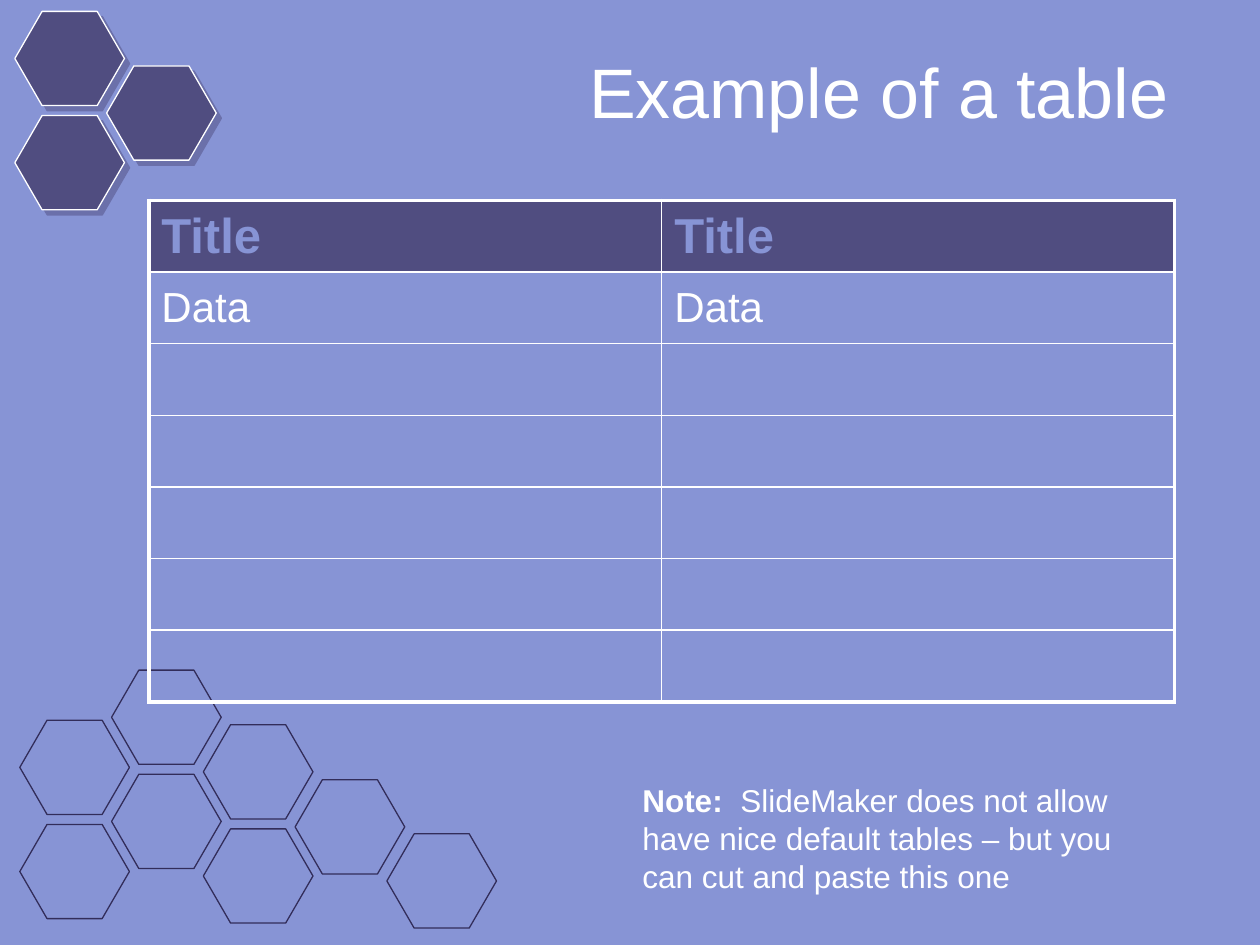
from dataclasses import dataclass

from lxml.etree import SubElement
from pptx import Presentation
from pptx.dml.color import RGBColor
from pptx.enum.shapes import MSO_SHAPE as Shape
from pptx.enum.text import MSO_ANCHOR as Anchor, PP_ALIGN as Align
from pptx.oxml import parse_xml
from pptx.oxml.ns import nsdecls, qn
from pptx.util import Cm, Pt

COLORS = {"sky": "8794D5", "plum": "504D80", "ink": "322D5A", "white": "FFFFFF"}
FONT = "Arial"
HEX_W, HEX_H = 2.21, 1.9
COLUMN_STEP, ROW_STEP = 1.85, 2.1
THICK, THIN = 2.25, 1


@dataclass
class HexColumn:
    index: int
    top: float
    count: int


@dataclass
class Honeycomb:
    left: float
    columns: list[HexColumn]
    line: str
    fill: str | None = None


@dataclass
class TextRun:
    text: str
    size: float
    bold: bool = False
    color: str = "white"


HONEYCOMBS = [
    Honeycomb(0.4, [HexColumn(0, 14.52, 2), HexColumn(1, 13.51, 2), HexColumn(2, 14.61, 2),
                    HexColumn(3, 15.72, 1), HexColumn(4, 16.81, 1)], "ink"),
    Honeycomb(0.3, [HexColumn(0, 0.23, 2), HexColumn(1, 1.33, 1)], "white", "plum"),
]
HEADER = ["Title", "Title"]
DATA = [["Data", "Data"]] + [["", ""]] * 5


def rgb(name: str) -> RGBColor:
    return RGBColor.from_string(COLORS[name])


def add_run(p, run: TextRun) -> None:
    r = p.add_run()
    r.text = run.text
    r.font.name = FONT
    r.font.size = Pt(run.size)
    r.font.bold = run.bold
    r.font.color.rgb = rgb(run.color)


def add_shadow(sp) -> None:
    """Half-transparent shadow towards the lower right."""
    effects = sp._element.spPr.find(qn("a:effectLst"))
    shadow = SubElement(effects, qn("a:outerShdw"), dist=str(Pt(4.2)), dir="2700000",
                        algn="ctr", rotWithShape="0")
    color = SubElement(shadow, qn("a:srgbClr"), val=COLORS["plum"])
    SubElement(color, qn("a:alpha"), val="50000")


def draw_hexagon(s, left: float, top: float, line: str, fill: str | None) -> None:
    sp = s.shapes.add_shape(Shape.HEXAGON, Cm(left), Cm(top), Cm(HEX_W), Cm(HEX_H))
    sp.adjustments[0] = 0.289
    sp.line.color.rgb = rgb(line)
    sp.line.width = Pt(0.75)
    sp.shadow.inherit = False
    if fill:
        sp.fill.solid()
        sp.fill.fore_color.rgb = rgb(fill)
        add_shadow(sp)
    else:
        sp.fill.background()


def draw_honeycomb(s, comb: Honeycomb) -> None:
    for column in comb.columns:
        left = comb.left + column.index * COLUMN_STEP
        for row in range(column.count):
            draw_hexagon(s, left, column.top + row * ROW_STEP, comb.line, comb.fill)


def draw_text(s, left: float, top: float, width: float, height: float, runs: list[TextRun],
              align=Align.LEFT, anchor=Anchor.TOP) -> None:
    tf = s.shapes.add_textbox(Cm(left), Cm(top), Cm(width), Cm(height)).text_frame
    tf.word_wrap = True
    tf.vertical_anchor = anchor
    p = tf.paragraphs[0]
    p.alignment = align
    for run in runs:
        add_run(p, run)


def set_borders(cell, widths: dict[str, float]) -> None:
    """Put the border lines, keyed by side, ahead of the cell's fill."""
    tc_pr = cell._tc.get_or_add_tcPr()
    for position, (side, width) in enumerate(widths.items()):
        tc_pr.insert(position, parse_xml(
            f'<a:ln{side} {nsdecls("a")} w="{Pt(width)}"><a:solidFill>'
            f'<a:srgbClr val="{COLORS["white"]}"/></a:solidFill></a:ln{side}>'))


def draw_table(s, left: float, top: float, width: float, height: float) -> None:
    rows = [HEADER] + DATA
    last_row, last_col = len(rows) - 1, len(HEADER) - 1
    table = s.shapes.add_table(len(rows), len(HEADER), Cm(left), Cm(top),
                               Cm(width), Cm(height)).table
    table.horz_banding = False
    for i, row in enumerate(rows):
        for j, text in enumerate(row):
            cell = table.cell(i, j)
            cell.vertical_anchor = Anchor.MIDDLE
            if i == 0:
                cell.fill.solid()
                cell.fill.fore_color.rgb = rgb("plum")
                run = TextRun(text, 28, True, "sky")
            else:
                cell.fill.background()
                run = TextRun(text, 24)
            if text:
                add_run(cell.text_frame.paragraphs[0], run)
            set_borders(cell, {"L": THICK if j == 0 else THIN,
                               "R": THICK if j == last_col else THIN,
                               "T": THICK if i == 0 else THIN,
                               "B": THICK if i == last_row else THIN})


def main() -> None:
    prs = Presentation()
    prs.slide_width, prs.slide_height = Cm(25.4), Cm(19.05)
    s = prs.slides.add_slide(prs.slide_layouts[6])
    s.background.fill.solid()
    s.background.fill.fore_color.rgb = rgb("sky")

    for comb in HONEYCOMBS:
        draw_honeycomb(s, comb)
    draw_text(s, 4.7, 0.71, 19.1, 2.21, [TextRun("Example of a table", 40)],
              Align.RIGHT, Anchor.MIDDLE)
    draw_table(s, 3, 4.04, 20.68, 10.11)
    draw_text(s, 12.7, 15.62, 10.69, 2.54, [
        TextRun("Note:  ", 18, True),
        TextRun("SlideMaker does not allow have nice default tables – "
                "but you can cut and paste this one", 18),
    ])
    prs.save("out.pptx")


if __name__ == "__main__":
    main()
